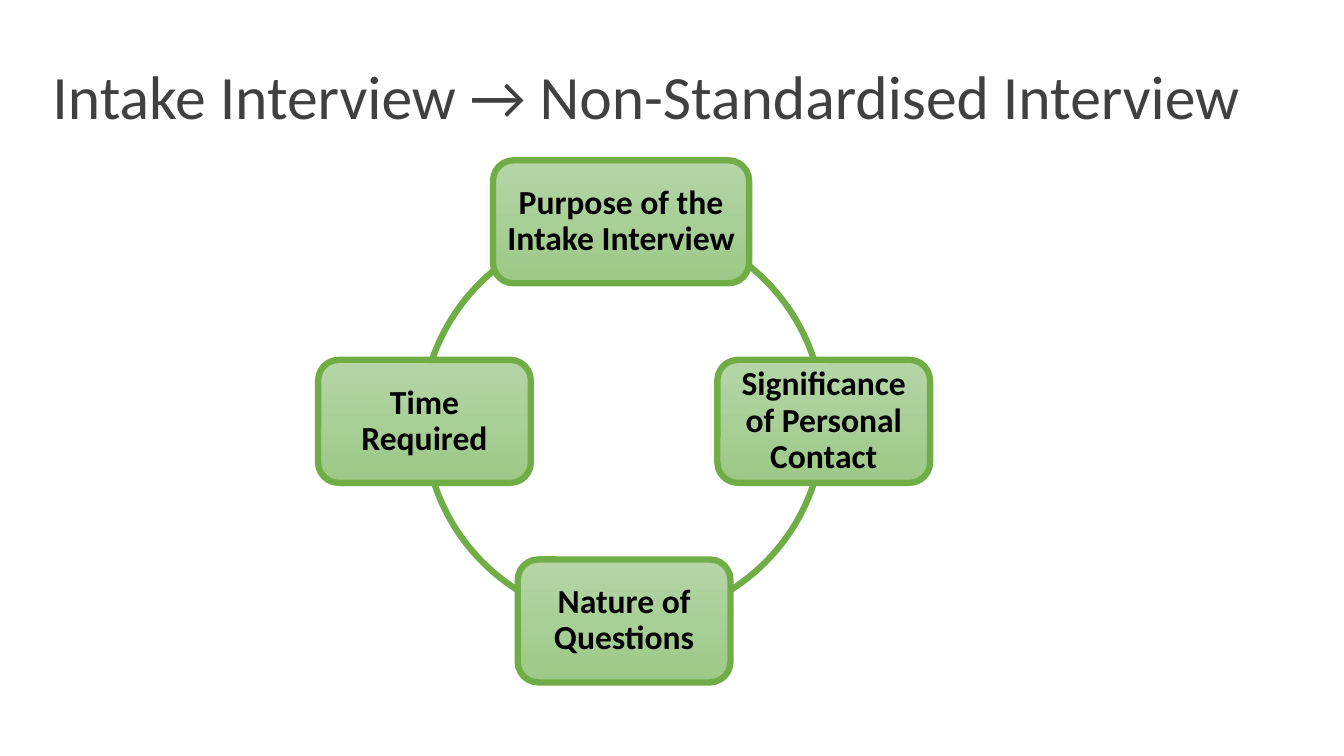
import math

import pptx
import pptx.dml.color
import pptx.enum.shapes
import pptx.enum.text
import pptx.util

Inches = pptx.util.Inches
Pt = pptx.util.Pt
SHAPE = pptx.enum.shapes.MSO_SHAPE
ALIGN = pptx.enum.text.PP_ALIGN
MIDDLE = pptx.enum.text.MSO_ANCHOR.MIDDLE

FONT = "Calibri"
GREEN = "70AD47"

# Text, width, sideways shift; clockwise from the top
STEPS = [
    ("Purpose of the Intake Interview", 2.54, -0.03),
    ("Significance of Personal Contact", 2.11, 0),
    ("Nature of Questions", 2.11, 0),
    ("Time Required", 2.11, 0),
]
# Start angle, end angle, shift in x and y; degrees clockwise from the right
ARCS = [
    (302.6, 341.5, 0, 0),
    (18.5, 57.4, 0, 0),
    (122.6, 161.5, 0, 0),
    (198.6, 237.6, -0.03, 0.03),
]


def color(target, value):
    target.rgb = pptx.dml.color.RGBColor.from_string(value)


def style(frame, size, shade, align, bold=False):
    frame.word_wrap = True
    frame.vertical_anchor = MIDDLE
    para = frame.paragraphs[0]
    para.alignment = align
    para.line_spacing = 0.9
    font = para.runs[0].font
    font.name, font.size, font.bold = FONT, Pt(size), bold
    color(font.color, shade)


def add_part(slide, kind, left, top, width, height):
    """Add a preset shape with the green outline and no shadow."""
    part = slide.shapes.add_shape(
        kind, Inches(left), Inches(top), Inches(width), Inches(height))
    part.shadow.inherit = False
    color(part.line.color, GREEN)
    part.line.width = Pt(4.5)
    return part


def add_title(slide, left, top, width, height):
    title = slide.shapes.title
    title.left, title.top = Inches(left), Inches(top)
    title.width, title.height = Inches(width), Inches(height)
    frame = title.text_frame
    frame.text = "Intake Interview → Non-Standardised Interview"
    frame.auto_size = pptx.enum.text.MSO_AUTO_SIZE.NONE
    style(frame, 44, "404041", ALIGN.LEFT)


def add_arc(slide, left, top, size, start, end):
    arc = add_part(slide, SHAPE.ARC, left, top, size, size)
    arc.fill.background()
    # One degree is 60000 units, and adjustments count in 100000
    arc.adjustments[0] = start * 0.6
    arc.adjustments[1] = end * 0.6


def add_step(slide, text, left, top, width, height):
    step = add_part(slide, SHAPE.ROUNDED_RECTANGLE, left, top, width, height)
    step.fill.gradient()
    step.fill.gradient_angle = 270
    for stop, shade in zip(step.fill.gradient_stops, ("B5D5A7", "9CC987")):
        color(stop.color, shade)
    frame = step.text_frame
    frame.margin_left = frame.margin_right = Inches(0.08)
    frame.margin_top = frame.margin_bottom = Inches(0.08)
    frame.text = text
    style(frame, 24, "000000", ALIGN.CENTER, True)


def add_cycle(slide, left, top, size):
    """Place the arcs of a ring and a step at each quarter of it."""
    for start, end, dx, dy in ARCS:
        add_arc(slide, left + dx, top + dy, size, start, end)
    radius, height = size / 2, 1.22
    for index, (text, width, shift) in enumerate(STEPS):
        angle = math.radians(90 * index - 90)
        mid_x = left + radius * (1 + math.cos(angle)) + shift
        mid_y = top + radius * (1 + math.sin(angle))
        add_step(slide, text, mid_x - width / 2, mid_y - height / 2,
                 width, height)


def main():
    deck = pptx.Presentation()
    deck.slide_width, deck.slide_height = Inches(13.33), Inches(7.5)
    slide = deck.slides.add_slide(deck.slide_layouts[5])
    add_title(slide, 0.42, 0.26, 12.12, 1.45)
    add_cycle(slide, 4.21, 2.2, 3.96)
    deck.save("out.pptx")


if __name__ == "__main__":
    main()
